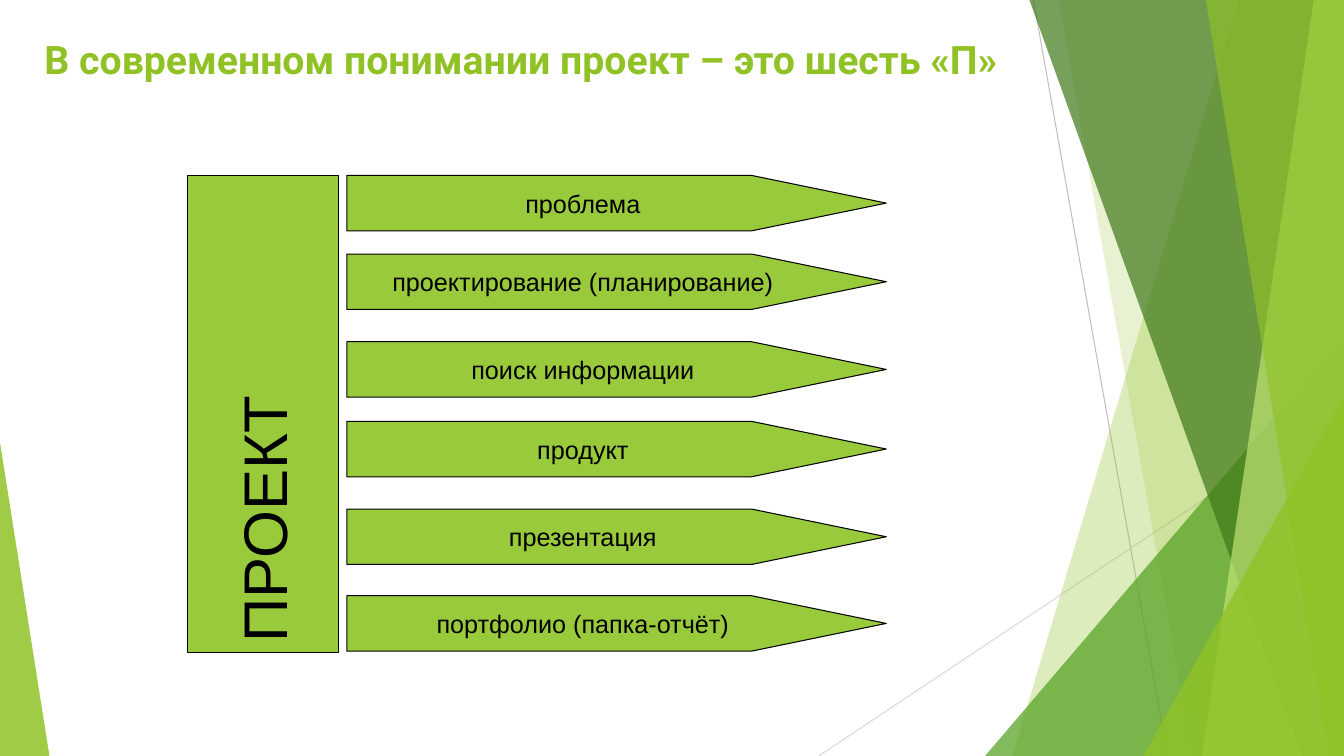
from dataclasses import dataclass

from lxml import etree
from pptx import Presentation
from pptx import util as u
from pptx.dml.color import RGBColor
from pptx.enum import shapes, text
from pptx.oxml.ns import qn


@dataclass(frozen=True)
class Theme:
    accent: str = "90C226"
    leaf: str = "54A021"
    forest: str = "3F7819"
    lime: str = "C0E474"
    block: str = "99CA3C"
    ink: str = "000000"
    rule_dark: str = "BFBFBF"
    rule_light: str = "D9D9D9"
    title_font: str = "Roboto"
    body_font: str = "Arial"
    title_size: int = 28
    label_size: int = 18
    banner_size: int = 44
    line_width: float = 0.75


WIDTH, HEIGHT = 13.33, 7.5


class SlideBuilder:
    def __init__(self, prs, theme):
        self.theme = theme
        self.s = prs.slides.add_slide(prs.slide_layouts[5])

    def label(self, tf, words, size, font, color, bold=False):
        tf.text = words
        tf.word_wrap = False
        p = tf.paragraphs[0]
        p.alignment = text.PP_ALIGN.CENTER
        r = p.runs[0]
        r.font.size = u.Pt(size)
        r.font.name = font
        r.font.bold = bold
        r.font.color.rgb = RGBColor.from_string(color)

    def title(self, words, *box):
        t = self.theme
        sp = self.s.shapes.title
        sp.left, sp.top, sp.width, sp.height = map(u.Inches, box)
        tf = sp.text_frame
        self.label(tf, words, t.title_size, t.title_font, t.accent, True)
        tf.vertical_anchor = text.MSO_ANCHOR.TOP
        tf.auto_size = text.MSO_AUTO_SIZE.SHAPE_TO_FIT_TEXT

    def line(self, x1, y1, x2, y2, color):
        cxn = self.s.shapes.add_connector(
            shapes.MSO_CONNECTOR.STRAIGHT, *map(u.Inches, (x1, y1, x2, y2)))
        cxn.line.color.rgb = RGBColor.from_string(color)
        cxn.line.width = u.Pt(self.theme.line_width)
        etree.SubElement(cxn.element.spPr, qn("a:effectLst"))

    def tint(self, sp, color, opacity):
        sp.shadow.inherit = False
        sp.fill.solid()
        sp.fill.fore_color.rgb = RGBColor.from_string(color)
        sp.line.fill.background()
        clr = next(sp.element.spPr.iter(qn("a:srgbClr")))
        etree.SubElement(clr, qn("a:alpha")).set("val", str(opacity * 1000))

    def shard(self, top_x, bottom_x, color, opacity):
        fb = self.s.shapes.build_freeform(u.Inches(top_x), 0)
        corners = [(WIDTH, 0), (WIDTH, HEIGHT), (bottom_x, HEIGHT)]
        fb.add_line_segments([(u.Inches(x), u.Inches(y)) for x, y in corners])
        self.tint(fb.convert_to_shape(), color, opacity)

    def corner(self, left, top, width, peak, color, opacity):
        sp = self.s.shapes.add_shape(
            shapes.MSO_SHAPE.ISOSCELES_TRIANGLE,
            *map(u.Inches, (left, top, width, HEIGHT - top)))
        sp.adjustments[0] = peak
        self.tint(sp, color, opacity)

    def block(self, kind, words, size, *box):
        t = self.theme
        sp = self.s.shapes.add_shape(kind, *map(u.Inches, box))
        sp.shadow.inherit = False
        sp.fill.solid()
        sp.fill.fore_color.rgb = RGBColor.from_string(t.block)
        sp.line.color.rgb = RGBColor.from_string(t.ink)
        sp.line.width = u.Pt(t.line_width)
        self.label(sp.text_frame, words, size, t.body_font, t.ink)
        sp.text_frame.vertical_anchor = text.MSO_ANCHOR.MIDDLE
        return sp

    def banner(self, words, *box):
        sp = self.block(shapes.MSO_SHAPE.RECTANGLE, words,
                        self.theme.banner_size, *box)
        sp.rotation = 180
        sp.element.txBody.bodyPr.set("vert", "eaVert")

    def arrow(self, words, top):
        sp = self.block(shapes.MSO_SHAPE.PENTAGON, words,
                        self.theme.label_size, 3.44, top, 5.35, 0.55)
        sp.adjustments[0] = 2.43


def main():
    prs = Presentation()
    prs.slide_width, prs.slide_height = u.Inches(WIDTH), u.Inches(HEIGHT)
    t = Theme()
    b = SlideBuilder(prs, t)

    b.line(10.25, 0, 11.58, HEIGHT, t.rule_dark)
    b.line(WIDTH, 4.03, 8.12, HEIGHT, t.rule_light)
    b.shard(12.28, 10.04, t.accent, 30)
    b.shard(10.5, 11.83, t.accent, 20)
    b.corner(9.77, 3.33, 3.56, 1, t.leaf, 72)
    b.shard(10.21, 12.91, t.forest, 70)
    b.shard(13.03, 11.92, t.lime, 70)
    b.shard(11.96, 13.18, t.accent, 65)
    b.corner(11.34, 3.93, 1.99, 1, t.accent, 80)
    b.corner(0, 4.39, 0.49, 0, t.accent, 85)

    b.title("В современном понимании проект – это шесть «П»",
            0.15, 0.3, 10.03, 0.57)
    b.banner("ПРОЕКТ", 1.86, 1.74, 1.5, 4.73)
    for words, top in [
        ("проблема", 1.74),
        ("проектирование (планирование)", 2.52),
        ("поиск информации", 3.39),
        ("продукт", 4.18),
        ("презентация", 5.05),
        ("портфолио (папка-отчёт)", 5.91),
    ]:
        b.arrow(words, top)

    prs.save("out.pptx")


if __name__ == "__main__":
    main()
